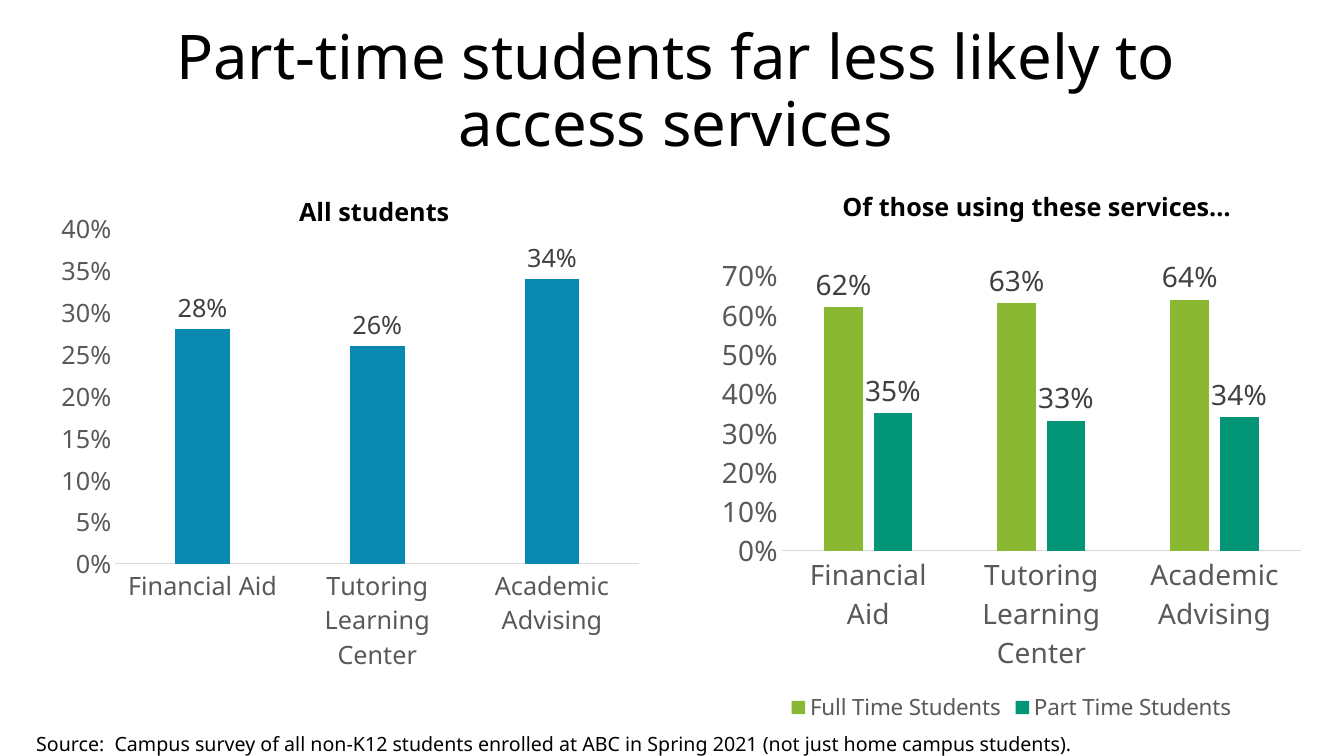
import pptx
import pptx.chart.data
import pptx.dml.color
import pptx.enum.chart
import pptx.enum.text
import pptx.util

Pt = pptx.util.Pt
FONT = "Noto Sans"
COLORS = {
    "text": "000000", "axis": "595959", "label": "404040", "baseline": "D9D9D9",
    "all": "0989B1", "full_time": "8AB833", "part_time": "029676",
}
SERVICES = ["Financial Aid", "Tutoring Learning Center", "Academic Advising"]


def rgb(name):
    return pptx.dml.color.RGBColor.from_string(COLORS[name])


def style_font(font, size, color, bold=False):
    font.name = FONT
    font.size = Pt(size)
    font.bold = bold
    font.color.rgb = rgb(color)


def add_text(slide, box, wording, size, bold=False):
    frame = slide.shapes.add_textbox(*map(Pt, box)).text_frame
    frame.word_wrap = True
    paragraph = frame.paragraphs[0]
    paragraph.text = wording
    style_font(paragraph.font, size, "text", bold)
    return frame


def add_title(slide, box, wording):
    frame = add_text(slide, box, wording, 44)
    frame.vertical_anchor = pptx.enum.text.MSO_ANCHOR.MIDDLE
    frame.paragraphs[0].alignment = pptx.enum.text.PP_ALIGN.CENTER
    frame.paragraphs[0].line_spacing = 0.9


def add_service_chart(slide, box, groups, size, top, step):
    """Draw one column per student group; groups holds (name, color, shares)."""
    shares_data = pptx.chart.data.CategoryChartData(number_format="0%")
    shares_data.categories = SERVICES
    for name, _, shares in groups:
        shares_data.add_series(name, shares)
    chart = slide.shapes.add_chart(
        pptx.enum.chart.XL_CHART_TYPE.COLUMN_CLUSTERED, *map(Pt, box), shares_data).chart
    chart.has_title = False
    style_font(chart.font, size, "text")

    # Axes
    services, percent = chart.category_axis, chart.value_axis
    for axis in (services, percent):
        axis.has_major_gridlines = False
        axis.major_tick_mark = pptx.enum.chart.XL_TICK_MARK.NONE
        axis.minor_tick_mark = pptx.enum.chart.XL_TICK_MARK.NONE
        style_font(axis.tick_labels.font, size, "axis")
    services.format.line.color.rgb = rgb("baseline")
    services.format.line.width = Pt(0.75)
    percent.format.line.fill.background()
    percent.tick_labels.number_format = "0%"
    percent.tick_labels.number_format_is_linked = False
    percent.minimum_scale, percent.maximum_scale = 0, top
    percent.major_unit = step

    # Columns and their labels
    plot = chart.plots[0]
    plot.gap_width, plot.overlap = 219, -27
    plot.vary_by_categories = False
    for series, (_, color, _) in zip(plot.series, groups):
        series.format.fill.solid()
        series.format.fill.fore_color.rgb = rgb(color)
        labels = series.data_labels
        labels.show_value = True
        labels.number_format = "0%"
        labels.number_format_is_linked = False
        labels.position = pptx.enum.chart.XL_LABEL_POSITION.OUTSIDE_END
        style_font(labels.font, size, "label")

    # Legend, only where groups are compared
    chart.has_legend = len(groups) > 1
    if chart.has_legend:
        chart.legend.position = pptx.enum.chart.XL_LEGEND_POSITION.BOTTOM
        chart.legend.include_in_layout = False
        style_font(chart.legend.font, 16, "axis")


def add_panel(slide, box, heading, heading_box, **chart_options):
    """Place a chart in box, with its heading offset from the box's corner."""
    left, top, _, _ = box
    dx, dy, width, height = heading_box
    add_service_chart(slide, box, **chart_options)
    add_text(slide, (left + dx, top + dy, width, height), heading, 18, bold=True)


def main():
    deck = pptx.Presentation()
    deck.slide_width, deck.slide_height = Pt(960), Pt(540)
    slide = deck.slides.add_slide(deck.slide_layouts[6])

    add_title(slide, (69, 14.4, 828, 104.4),
              "Part-time students far less likely to access services")

    # Full-time against part-time
    add_panel(slide, (507, 176.4, 431, 342.7),
              "Of those using these services…", (87.7, -43.2, 310, 29),
              groups=[("Full Time Students", "full_time", (0.62, 0.63, 0.64)),
                      ("Part Time Students", "part_time", (0.35, 0.33, 0.34))],
              size=20, top=0.7, step=0.1)

    # All students
    add_panel(slide, (35.3, 144, 430, 342.7),
              "All students", (171.3, -7.2, 128, 29),
              groups=[("Series 1", "all", (0.28, 0.26, 0.34))],
              size=18, top=0.4, step=0.05)

    # Source line
    add_text(slide, (18.7, 519.1, 790, 24.5),
             "Source:  Campus survey of all non-K12 students enrolled at ABC "
             "in Spring 2021 (not just home campus students).", 14)

    deck.save("out.pptx")


if __name__ == "__main__":
    main()
